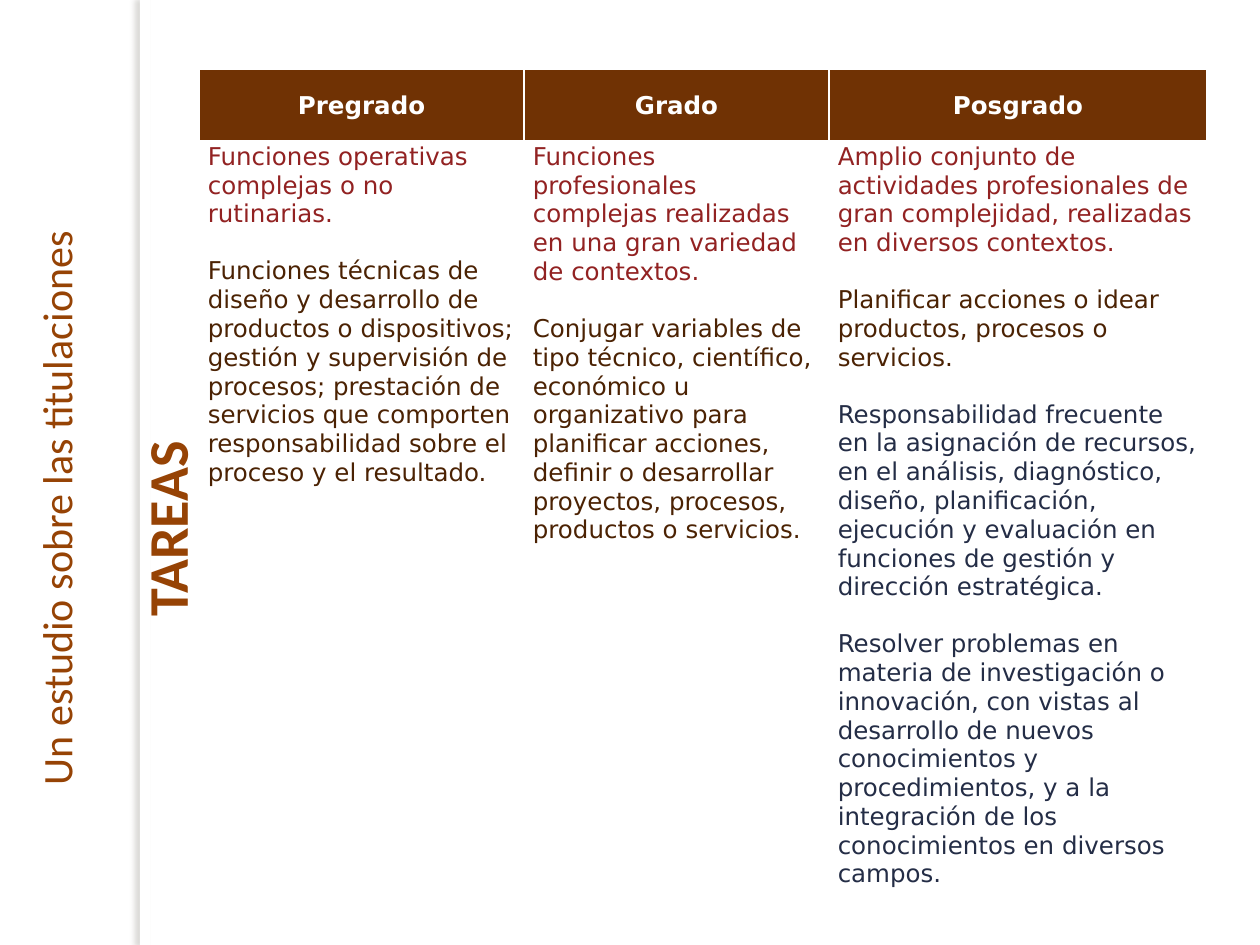
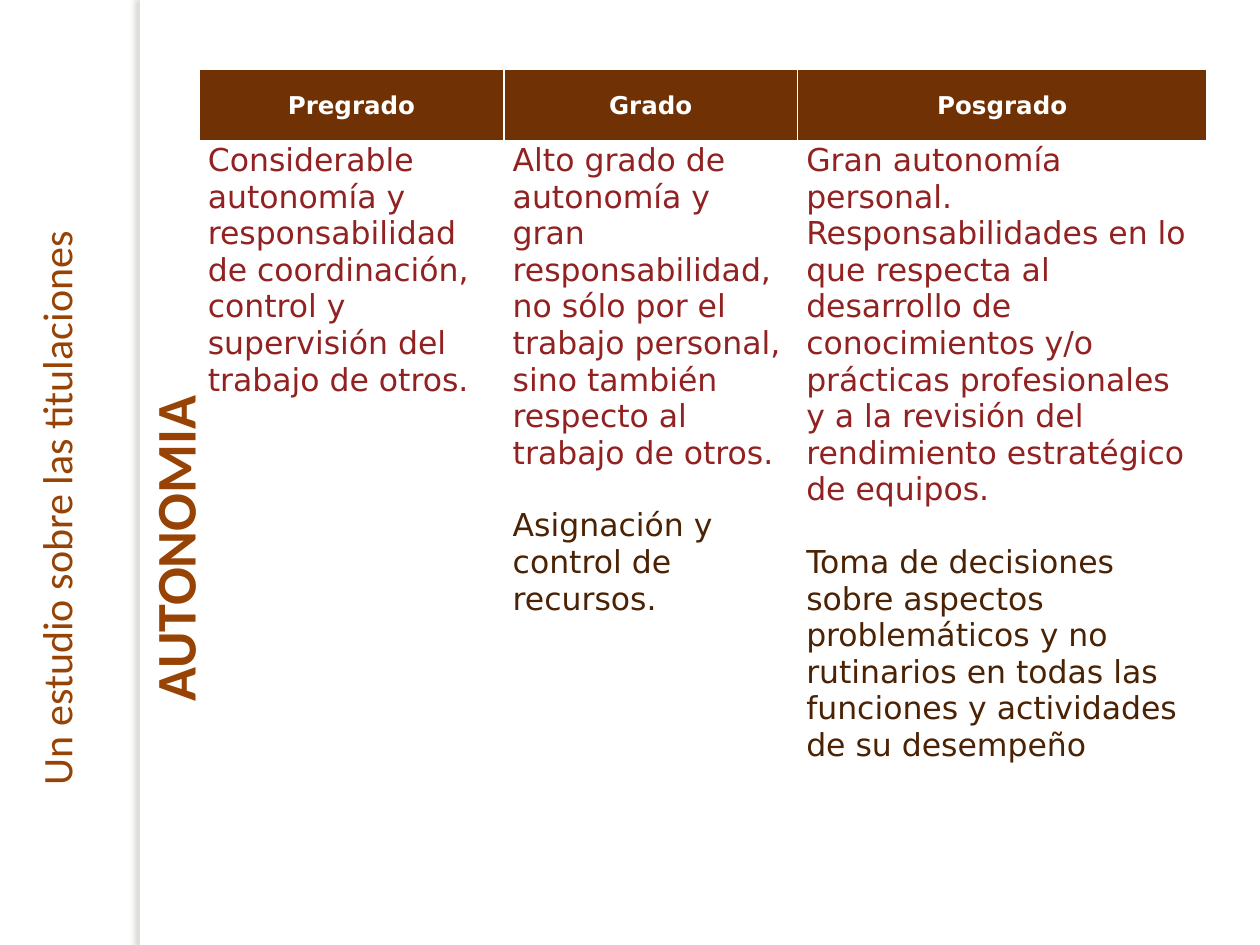
from lxml.etree import SubElement
from pptx import Presentation
from pptx.dml.color import RGBColor
from pptx.enum.shapes import MSO_SHAPE as Shape
from pptx.enum.text import MSO_ANCHOR as Anchor, MSO_AUTO_SIZE as AutoSize, PP_ALIGN as Align
from pptx.oxml import parse_xml
from pptx.oxml.ns import nsdecls, qn
from pptx.util import Pt

WHITE = RGBColor(0xFF, 0xFF, 0xFF)
SHADOW = RGBColor(0x73, 0x6F, 0x63)
BROWN = RGBColor(0x70, 0x32, 0x04)
ORANGE = RGBColor(0x96, 0x43, 0x05)
RED = RGBColor(0x92, 0x22, 0x22)
DARK_BROWN = RGBColor(0x4B, 0x22, 0x03)
NAVY = RGBColor(0x24, 0x2D, 0x46)

PARAGRAPH_COLORS = [RED, DARK_BROWN, NAVY, NAVY]  # by place within a cell
SIDE_TEXT = "Un estudio sobre las titulaciones"
LEVELS = ["Pregrado", "Grado", "Posgrado"]
SIDE_BOX = (-128, 255.5, 342, 58.5)

PAGES = [
    {
        "title": "TAREAS",
        "title_box": (21.5, 242, 168, 67.5),
        "body_size": 14,
        "widths": [185.75, 174.25, 216],
        "body": [
            ["Funciones operativas complejas o no rutinarias.",
             "Funciones técnicas de diseño y desarrollo de productos o dispositivos; "
             "gestión y supervisión de procesos; prestación de servicios que comporten "
             "responsabilidad sobre el proceso y el resultado."],
            ["Funciones profesionales complejas realizadas en una gran variedad de contextos.",
             "Conjugar variables de tipo técnico, científico, económico u organizativo para "
             "planificar acciones, definir o desarrollar proyectos, procesos, productos o "
             "servicios."],
            ["Amplio conjunto de actividades profesionales de gran complejidad, realizadas en "
             "diversos contextos.",
             "Planificar acciones o idear productos, procesos o servicios.",
             "Responsabilidad frecuente en la asignación de recursos, en el análisis, "
             "diagnóstico, diseño, planificación, ejecución y evaluación en funciones de "
             "gestión y dirección estratégica.",
             "Resolver problemas en materia de investigación o innovación, con vistas al "
             "desarrollo de nuevos conocimientos y procedimientos, y a la integración de los "
             "conocimientos en diversos campos."],
        ],
    },
    {
        "title": "AUTONOMIA",
        "title_box": (-16, 248.5, 252, 67.5),
        "body_size": 18,
        "widths": [174.25, 167.75, 234],
        "body": [
            ["Considerable autonomía y responsabilidad de coordinación, control y supervisión "
             "del trabajo de otros."],
            ["Alto grado de autonomía y gran responsabilidad, no sólo por el trabajo personal, "
             "sino también respecto al trabajo de otros.",
             "Asignación y control de recursos."],
            ["Gran autonomía personal. Responsabilidades en lo que respecta al desarrollo de "
             "conocimientos y/o prácticas profesionales y a la revisión del rendimiento "
             "estratégico de equipos.",
             "Toma de decisiones sobre aspectos problemáticos y no rutinarios en todas las "
             "funciones y actividades de su desempeño"],
        ],
    },
]


def write(frame, texts, *, size, colors, font="DejaVu Sans", bold=False, align=Align.LEFT):
    """Write one paragraph per text, each a blank line's height below the last."""
    for index, (text, color) in enumerate(zip(texts, colors)):
        para = frame.add_paragraph() if index else frame.paragraphs[0]
        para.alignment = align
        para.space_before = Pt(size * 1.15 if index else 0)
        span = para.add_run()
        span.text = text
        span.font.name = font
        span.font.size = Pt(size)
        span.font.bold = bold
        span.font.color.rgb = color


def place_sideways(shape, bounds, text, **style):
    """Turn a text shape to read upwards; bounds are those before turning."""
    shape.left, shape.top, shape.width, shape.height = map(Pt, bounds)
    shape.rotation = 270
    frame = shape.text_frame
    frame.word_wrap = True
    frame.auto_size = AutoSize.NONE
    frame.vertical_anchor = Anchor.TOP
    write(frame, [text], font="Calibri", colors=[ORANGE], **style)


def add_band(page):
    band = page.shapes.add_shape(Shape.RECTANGLE, Pt(80), 0, Pt(5.75), Pt(540))
    band.fill.solid()
    band.fill.fore_color.rgb = WHITE
    band.line.fill.background()
    effects = SubElement(band.element.spPr, qn("a:effectLst"))
    effects.append(parse_xml(
        f'<a:outerShdw {nsdecls("a")} blurRad="{Pt(3)}" dist="{Pt(3)}" dir="10800000" '
        f'algn="r" rotWithShape="0"><a:srgbClr val="{SHADOW}"><a:alpha val="25000"/>'
        '</a:srgbClr></a:outerShdw>'))
    page.shapes.element.insert(2, band.element)  # behind everything else


def format_cell(cell, fill, anchor, borders):
    """Set fill, insets and white borders; borders maps each side to its width."""
    cell.margin_left = cell.margin_right = Pt(5)
    cell.margin_top = cell.margin_bottom = 0
    cell.vertical_anchor = anchor
    cell.fill.solid()
    cell.fill.fore_color.rgb = fill
    properties = cell._tc.get_or_add_tcPr()
    for index, (side, width) in enumerate(borders.items()):
        properties.insert(index, parse_xml(
            f'<a:ln{side} {nsdecls("a")} w="{Pt(width)}"><a:solidFill>'
            f'<a:srgbClr val="{WHITE}"/></a:solidFill></a:ln{side}>'))


def add_levels_table(page, widths, body, body_size):
    table = page.shapes.add_table(
        2, len(LEVELS), Pt(113.75), Pt(39.5), Pt(sum(widths)), Pt(440)).table
    table.horz_banding = False
    table.rows[0].height, table.rows[1].height = Pt(42), Pt(398)
    for column, (level, texts, width) in enumerate(zip(LEVELS, body, widths)):
        table.columns[column].width = Pt(width)
        header, content = table.cell(0, column), table.cell(1, column)
        format_cell(header, BROWN, Anchor.MIDDLE, {"L": 1, "R": 1, "T": 1, "B": 3})
        write(header.text_frame, [level], size=14, colors=[WHITE], bold=True,
              align=Align.CENTER)
        format_cell(content, WHITE, Anchor.TOP, {"L": 1, "R": 1, "T": 3, "B": 1})
        write(content.text_frame, texts, size=body_size, colors=PARAGRAPH_COLORS)


def main():
    deck = Presentation()
    deck.slide_width, deck.slide_height = Pt(720), Pt(540)
    title_only = deck.slide_layouts[5]
    for content in PAGES:
        page = deck.slides.add_slide(title_only)
        add_band(page)
        add_levels_table(page, content["widths"], content["body"], content["body_size"])
        place_sideways(page.shapes.add_textbox(0, 0, 0, 0), SIDE_BOX, SIDE_TEXT, size=24)
        place_sideways(page.shapes.title, content["title_box"], content["title"],
                       size=32, bold=True)
    deck.save("out.pptx")


if __name__ == "__main__":
    main()
